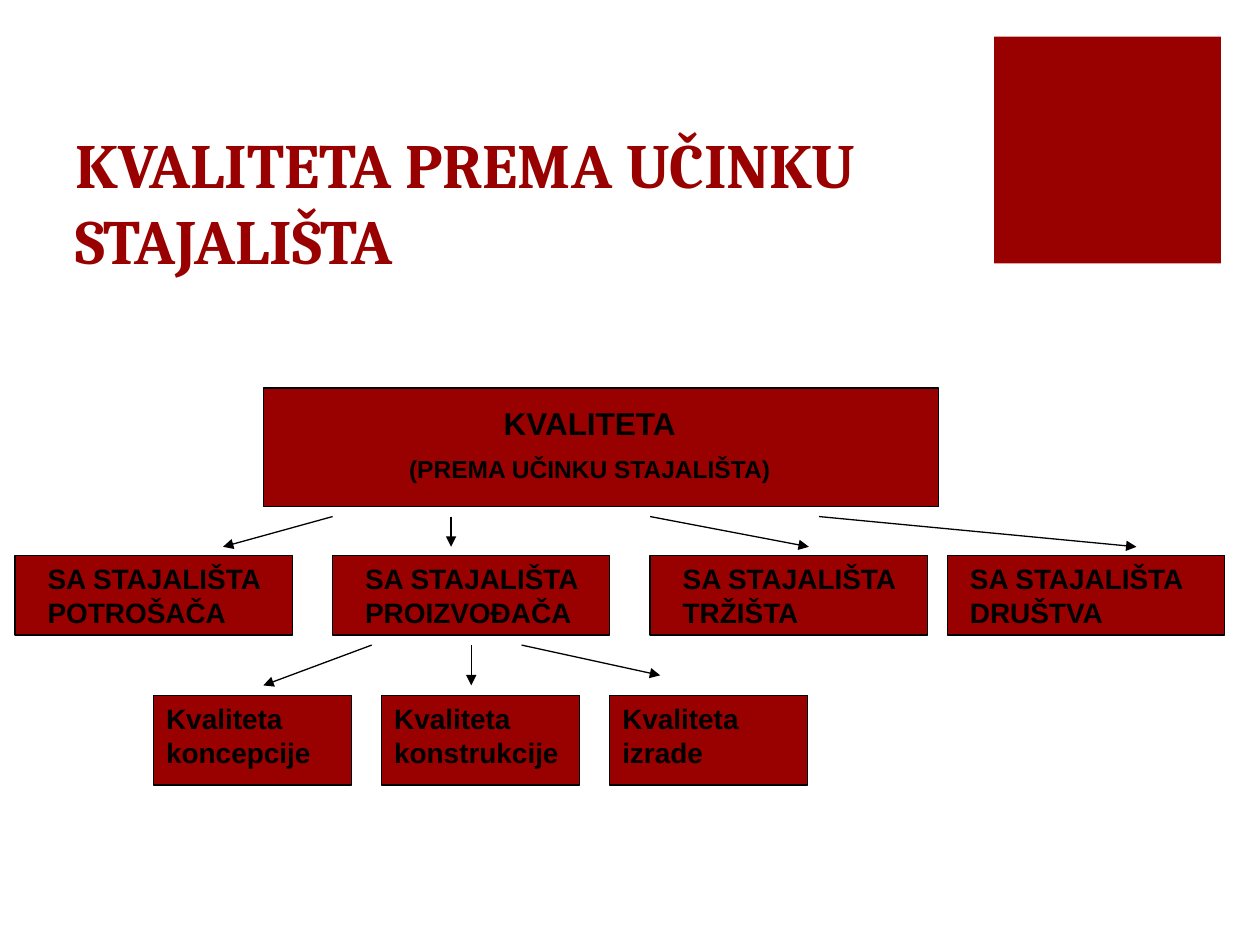
from dataclasses import dataclass

from lxml import etree
from pptx import Presentation
from pptx.dml.color import RGBColor
from pptx.enum import shapes, text
from pptx.oxml import ns
from pptx.util import Inches, Pt


@dataclass(frozen=True)
class Theme:
    """Colours, fonts and sizes of the slide."""
    red: RGBColor = RGBColor(0x99, 0x00, 0x00)
    ink: RGBColor = RGBColor(0x00, 0x00, 0x00)
    heading_font: str = "Cambria"
    body_font: str = "Arial"
    heading_size: int = 36
    root_size: int = 18
    subtitle_size: int = 14
    node_size: int = 16
    line_width: float = 0.75


THEME = Theme()


def style_font(paragraph, name, size, color):
    """Set the bold font of every run in a paragraph."""
    for run in paragraph.runs:
        run.font.name = name
        run.font.size = Pt(size)
        run.font.bold = True
        run.font.color.rgb = color


def add_panel(slide, box, outlined=True):
    """Draw a red rectangle in the box."""
    panel = slide.shapes.add_shape(
        shapes.MSO_SHAPE.RECTANGLE, *map(Inches, box))
    panel.shadow.inherit = False
    panel.fill.solid()
    panel.fill.fore_color.rgb = THEME.red
    if outlined:
        panel.line.color.rgb = THEME.ink
        panel.line.width = Pt(THEME.line_width)
    else:
        panel.line.fill.background()


def add_label(slide, box, lines, align=text.PP_ALIGN.LEFT):
    """Write (wording, size) lines as paragraphs in the box."""
    frame = slide.shapes.add_textbox(*map(Inches, box)).text_frame
    frame.word_wrap = True
    frame.auto_size = text.MSO_AUTO_SIZE.SHAPE_TO_FIT_TEXT
    frame.text = "\n".join(wording for wording, _ in lines)
    for index, (paragraph, (_, size)) in enumerate(zip(frame.paragraphs, lines)):
        paragraph.alignment = align
        if index:
            paragraph.space_before = Pt(size / 2)
        style_font(paragraph, THEME.body_font, size, THEME.ink)


def add_arrow(slide, start, end):
    """Draw a thin arrow from start to end."""
    arrow = slide.shapes.add_connector(
        shapes.MSO_CONNECTOR.STRAIGHT, *map(Inches, (*start, *end)))
    arrow.line.color.rgb = THEME.ink
    arrow.line.width = Pt(THEME.line_width)
    etree.SubElement(arrow.line._get_or_add_ln(), ns.qn("a:tailEnd"), type="triangle")
    etree.SubElement(arrow._element.spPr, ns.qn("a:effectLst"))


def add_heading(slide, box, wording):
    """Place the title placeholder in the box."""
    title = slide.shapes.title
    title.left, title.top, title.width, title.height = map(Inches, box)
    frame = title.text_frame
    frame.text = wording
    frame.word_wrap = True
    frame.auto_size = text.MSO_AUTO_SIZE.NONE
    frame.vertical_anchor = text.MSO_ANCHOR.BOTTOM
    frame.paragraphs[0].alignment = text.PP_ALIGN.LEFT
    style_font(frame.paragraphs[0], THEME.heading_font, THEME.heading_size, THEME.red)


def add_root(slide, box):
    """Draw the top node with its subtitle."""
    left, top, _, _ = box
    add_panel(slide, box)
    add_label(slide, (left + 0.23, top + 0.08, 4.72, 0.75),
              [("KVALITETA", THEME.root_size),
               ("(PREMA UČINKU STAJALIŠTA)", THEME.subtitle_size)],
              text.PP_ALIGN.CENTER)


def add_row(slide, box, nodes, label_width):
    """Draw a row of nodes, each given as (left, label indent, wording)."""
    row_left, top, width, height = box
    for left, indent, wording in nodes:
        node_left = row_left + left
        add_panel(slide, (node_left, top, width, height))
        add_label(slide, (node_left + indent, top, label_width, 0.64),
                  [(wording, THEME.node_size)])


def add_branches(slide, top, branches):
    """Draw arrows from one level, each given as (start x, end x, drop)."""
    for start_x, end_x, drop in branches:
        add_arrow(slide, (start_x, top), (end_x, top + drop))


def main():
    """Build and save the slide."""
    deck = Presentation()
    deck.slide_width, deck.slide_height = Inches(10), Inches(7.5)
    slide = deck.slides.add_slide(deck.slide_layouts.get_by_name("Title Only"))

    add_panel(slide, (7.89, 0.29, 1.8, 1.8), outlined=False)
    add_heading(slide, (0.5, 1, 7.12, 1.25), "KVALITETA PREMA UČINKU STAJALIŠTA")
    add_root(slide, (2.09, 3.08, 5.36, 0.94))
    add_branches(slide, 4.1, [(2.64, 1.77, 0.24), (3.58, 3.58, 0.24),
                              (5.16, 6.42, 0.24), (6.5, 9.02, 0.24)])
    add_row(slide, (0.12, 4.41, 2.2, 0.63),
            [(0, 0.16, "SA STAJALIŠTA POTROŠAČA"),
             (2.52, 0.16, "SA STAJALIŠTA PROIZVOĐAČA"),
             (5.04, 0.16, "SA STAJALIŠTA TRŽIŠTA"),
             (7.4, 0.08, "SA STAJALIŠTA DRUŠTVA")], 1.97)
    add_branches(slide, 5.12, [(2.95, 2.09, 0.32), (3.74, 3.74, 0.32),
                               (4.14, 5.24, 0.24)])
    aspects = ["koncepcije", "konstrukcije", "izrade"]
    add_row(slide, (1.22, 5.52, 1.57, 0.71),
            [(1.81 * column, 0, f"Kvaliteta {aspect}")
             for column, aspect in enumerate(aspects)], 1.58)

    deck.save("out.pptx")


if __name__ == "__main__":
    main()
